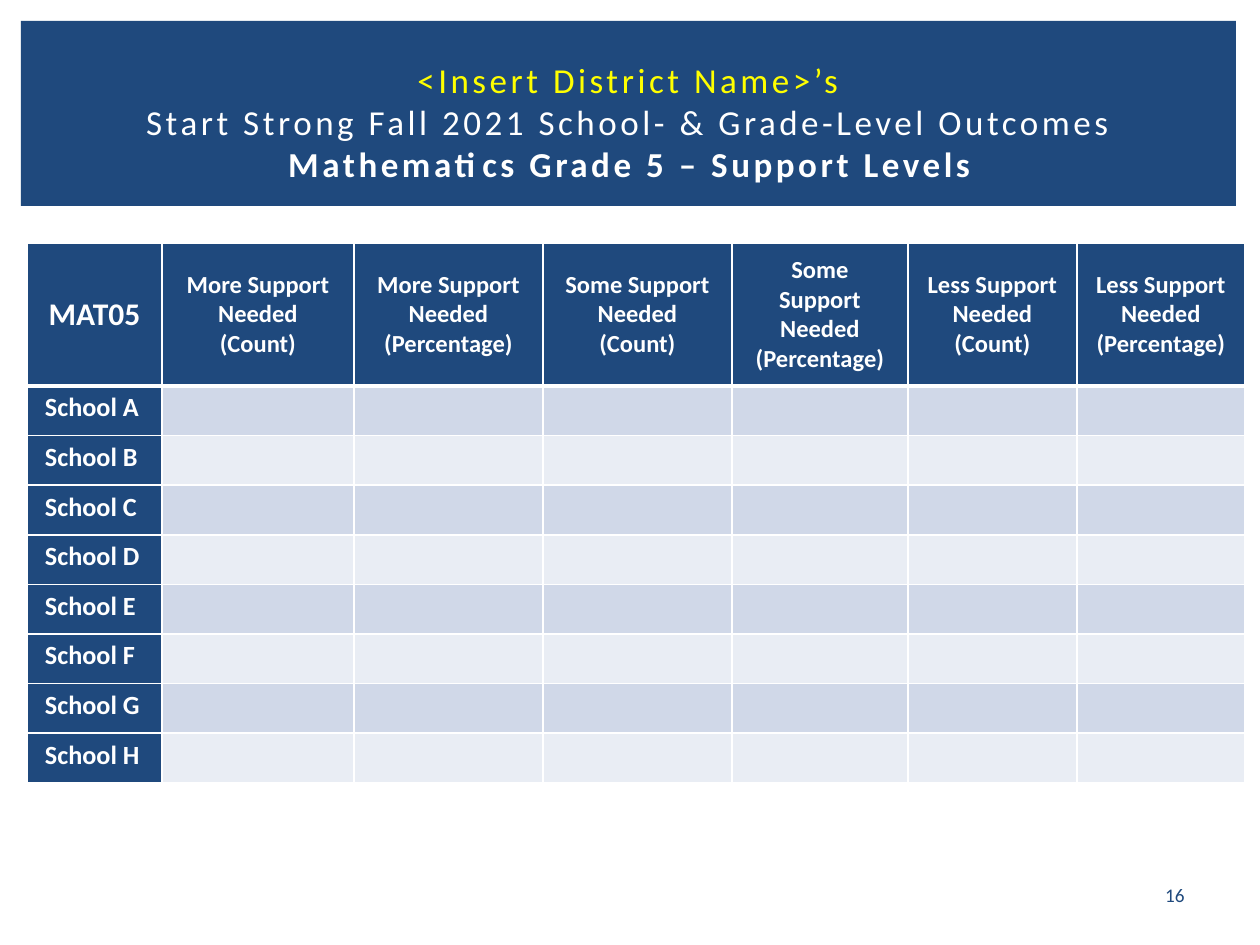
import pptx
import pptx.util
import pptx.dml.color
import pptx.enum.shapes
import pptx.enum.text
import pptx.oxml
import pptx.oxml.ns

PX = pptx.util.Inches(1) / 126
NAVY, WHITE, YELLOW = "1F497D", "FFFFFF", "FFFF00"
BANDS = ["D0D8E8", "E9EDF4"]
CENTER = pptx.enum.text.PP_ALIGN.CENTER
MIDDLE = pptx.enum.text.MSO_ANCHOR.MIDDLE


def px(length):
    return pptx.util.Emu(round(length * PX))


def color(value):
    return pptx.dml.color.RGBColor.from_string(value)


def fill(target, value):
    target.fill.solid()
    target.fill.fore_color.rgb = color(value)


def add_text(para, text, size, ink=WHITE, bold=False, align=None, spacing=None):
    para.alignment = align
    span = para.add_run()
    span.text = text
    span.font.name = "Calibri"
    span.font.size = pptx.util.Pt(size)
    span.font.bold = bold
    span.font.color.rgb = color(ink)
    if spacing:
        span.font._element.set("spc", str(spacing * 100))


def set_borders(cell, bottom):
    properties = cell._tc.get_or_add_tcPr()
    for index, side in enumerate(["lnL", "lnR", "lnT", "lnB"]):
        width = pptx.util.Pt(bottom if side == "lnB" else 1)
        properties.insert(index, pptx.oxml.parse_xml(
            f'<a:{side} {pptx.oxml.ns.nsdecls("a")} w="{width}"><a:solidFill>'
            f'<a:srgbClr val="{WHITE}"/></a:solidFill></a:{side}>'))


def place_title(page, left, top, width, height):
    banner = page.shapes.add_shape(
        pptx.enum.shapes.MSO_SHAPE.RECTANGLE, px(left), px(top), px(width), px(height))
    banner.shadow.inherit = False
    fill(banner, NAVY)
    banner.line.fill.background()
    title = page.shapes.title
    title.left, title.top = px(left + 14), px(top + 28)
    title.width, title.height = px(width - 26), px(height - 40)
    page.shapes._spTree.append(title._element)
    frame = title.text_frame
    frame.word_wrap = True
    frame.auto_size = pptx.enum.text.MSO_AUTO_SIZE.NONE
    frame.vertical_anchor = MIDDLE
    para = frame.paragraphs[0]
    lines = [
        ("<Insert District Name>’s", YELLOW, False),
        ("Start Strong Fall 2021 School- & Grade-Level Outcomes", WHITE, False),
        ("Mathematics Grade 5 – Support Levels", WHITE, True),
    ]
    for index, (text, ink, bold) in enumerate(lines):
        if index:
            para.add_line_break()
        add_text(para, text, 20, ink=ink, bold=bold, align=CENTER, spacing=2)


def place_support_table(page, left, top, height):
    schools = [f"School {letter}" for letter in "ABCDEFGH"]
    headings = [(f"{level} Support Needed", f"({unit})")
                for level in ["More", "Some", "Less"] for unit in ["Count", "Percentage"]]
    widths = [135, 192, 189, 189, 176, 169, 168]
    header_height = 143
    row_height = (height - header_height) / len(schools)
    table = page.shapes.add_table(
        len(schools) + 1, len(widths), px(left), px(top), px(sum(widths)), px(height)).table
    for column, width in zip(table.columns, widths):
        column.width = px(width)
    for index, row in enumerate(table.rows):
        row.height = px(row_height if index else header_height)
        for position, cell in enumerate(row.cells):
            label = index == 0 or position == 0
            cell.margin_left = cell.margin_right = px(18)
            cell.margin_top = cell.margin_bottom = px(6 if label else 0)
            fill(cell, NAVY if label else BANDS[(index - 1) % 2])
            set_borders(cell, bottom=1 if index else 3)
            para = cell.text_frame.paragraphs[0]
            if index == 0:
                cell.vertical_anchor = MIDDLE
                if position == 0:
                    add_text(para, "MAT05", 18, bold=True, align=CENTER)
                else:
                    heading, unit = headings[position - 1]
                    add_text(para, heading, 14, bold=True, align=CENTER)
                    add_text(cell.text_frame.add_paragraph(), unit, 14, bold=True, align=CENTER)
            elif position == 0:
                add_text(para, schools[index - 1], 15, bold=True)


def place_page_number(page, left, top, width, height):
    box = page.shapes.add_textbox(px(left), px(top), px(width), px(height))
    box.text_frame.word_wrap = True
    box.text_frame.vertical_anchor = MIDDLE
    add_text(box.text_frame.paragraphs[0], "16", 11, ink=NAVY, align=CENTER)


def main():
    deck = pptx.Presentation()
    deck.slide_width, deck.slide_height = px(1260), px(945)
    page = deck.slides.add_slide(deck.slide_layouts.get_by_name("Title Only"))
    place_title(page, 21, 21, 1215, 185)
    place_support_table(page, 27, 243, 540)
    place_page_number(page, 1135, 876, 80, 38)
    deck.save("out.pptx")


if __name__ == "__main__":
    main()
